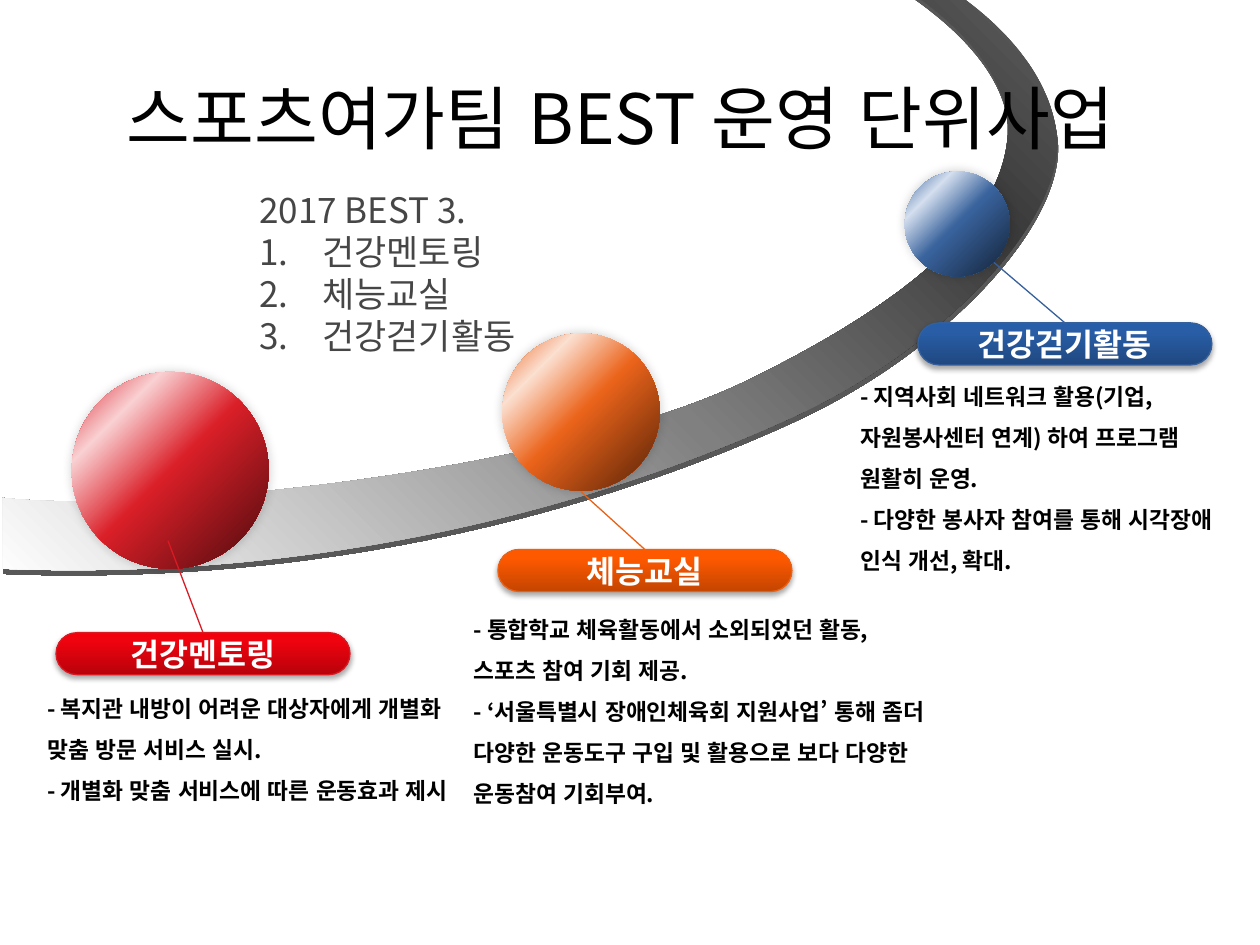
from dataclasses import dataclass

from lxml.etree import SubElement
from pptx import Presentation
from pptx.dml.color import RGBColor
from pptx.enum.lang import MSO_LANGUAGE_ID
from pptx.enum.shapes import MSO_CONNECTOR, MSO_SHAPE
from pptx.enum.text import MSO_ANCHOR, MSO_AUTO_SIZE, PP_ALIGN
from pptx.oxml.ns import qn
from pptx.util import Pt


@dataclass(frozen=True)
class Theme:
    font: str = "Noto Sans CJK KR"
    black: str = "000000"
    white: str = "FFFFFF"
    grey: str = "464646"
    road_edge: str = "585858"
    road: tuple = ((6, "585858"), (20, "3A3A3A"), (50, "808080"), (100, "FFFFFF"))
    title_size: float = 39.6
    list_size: float = 20
    label_size: float = 18
    body_size: float = 13


@dataclass(frozen=True)
class Programme:
    name: str
    details: str
    ball: tuple
    label: tuple
    body: tuple
    line_end: tuple
    line_color: str
    ball_colors: tuple
    label_colors: tuple


THEME = Theme()
LABEL_WIDTH, LABEL_HEIGHT = 168, 24
ROAD_PLACE = (1.5, -29, 606.5, 362)
ROAD = [
    ("moveTo", (478, -29)),
    ("lnTo", (500, -29)),
    ("cubicBezTo", (549, -9), (599, 30), (604, 78)),
    ("cubicBezTo", (608, 125), (540, 199), (451.5, 239)),
    ("cubicBezTo", (364, 279), (204, 333), (1.5, 325)),
    ("lnTo", (1.5, 284.5)),
    ("cubicBezTo", (89, 294), (322, 269), (428, 217)),
    ("cubicBezTo", (534, 165), (574, 119), (576, 75.5)),
    ("cubicBezTo", (577, 32), (526, -6), (478, -29)),
    ("close",),
]
PROGRAMMES = [
    Programme(
        "건강걷기활동",
        "- 지역사회 네트워크 활용(기업, 자원봉사센터 연계) 하여 프로그램 원활히 운영.\v"
        "- 다양한 봉사자 참여를 통해 시각장애 인식 개선, 확대.",
        (517, 98, 60), (524.5, 184.5), (484.5, 207.5, 231, 125), (568, 150),
        "35609C", ("1C314E", "39639D", "D4DFEF"), ("1F4880", "295EA7", "265EAA"),
    ),
    Programme(
        "체능교실",
        "- 통합학교 체육활동에서 소외되었던 활동, 스포츠 참여 기회 제공. \v"
        "- ‘서울특별시 장애인체육회 지원사업’ 통해 좀더 다양한 운동도구 구입 및 "
        "활용으로 보다 다양한 운동참여 기회부여.",
        (287, 190.5, 90), (284.5, 314), (263.5, 340.5, 276.5, 125), (332, 281),
        "EB6015", ("78310B", "EB641B", "FBE0D1"), ("C44500", "FE5900", "FF5A00"),
    ),
    Programme(
        "건강멘토링",
        "- 복지관 내방이 어려운 대상자에게 개별화 맞춤 방문 서비스 실시. \v"
        "- 개별화 맞춤 서비스에 따른 운동효과 제시",
        (41, 212.5, 112.5), (32, 361.5), (20, 385.5, 255, 101.5), (96, 309),
        "DA1A23", ("6D1014", "DA1F28", "F9D1D3"), ("B8020B", "EE030E", "F2000C"),
    ),
]


def points(*values):
    return [Pt(value) for value in values]


def set_gradient(shape, stops, angle=None):
    shape.fill.background()
    properties = shape.element.spPr
    empty_fill = properties.find(qn("a:noFill"))
    gradient = SubElement(properties, qn("a:gradFill"), rotWithShape="1")
    stop_list = SubElement(gradient, qn("a:gsLst"))
    for position, color in stops:
        stop = SubElement(stop_list, qn("a:gs"), pos=str(position * 1000))
        SubElement(stop, qn("a:srgbClr"), val=color)
    if angle is None:
        path = SubElement(gradient, qn("a:path"), {"path": "circle"})
        SubElement(path, qn("a:fillToRect"), l="100000", t="100000")
    else:
        SubElement(gradient, qn("a:lin"), ang=str(angle * 60000), scaled="0")
    properties.replace(empty_fill, gradient)


def set_shadow(shape, color, opacity, blur, distance, angle):
    shape.shadow.inherit = False
    effects = shape.element.spPr.find(qn("a:effectLst"))
    shadow = SubElement(
        effects, qn("a:outerShdw"), blurRad=str(Pt(blur)), dist=str(Pt(distance)),
        dir=str(angle * 60000), algn="ctr", rotWithShape="0",
    )
    color_node = SubElement(shadow, qn("a:srgbClr"), val=color)
    SubElement(color_node, qn("a:alpha"), val=str(opacity * 1000))


def format_text(para, size, color, bold=False):
    for span in para.runs:
        span.font.size = Pt(size)
        span.font.bold = bold
        span.font.name = THEME.font
        span.font.language_id = MSO_LANGUAGE_ID.KOREAN
        span.font.color.rgb = RGBColor.from_string(color)
        span.font._element.set("kern", "0")
        SubElement(span.font._element, qn("a:ea"), typeface=THEME.font)


def add_road(page):
    left, top, width, height = points(*ROAD_PLACE)
    builder = page.shapes.build_freeform(left, top)
    builder.add_line_segments([(left + width, top), (left + width, top + height)])
    road = builder.convert_to_shape()
    outline = next(road.element.iter(qn("a:path")))
    for segment in list(outline):
        outline.remove(segment)
    for command, *corners in ROAD:
        segment = SubElement(outline, qn("a:" + command))
        for x, y in corners:
            SubElement(segment, qn("a:pt"), x=str(Pt(x) - left), y=str(Pt(y) - top))
    road.line.fill.background()
    set_gradient(road, THEME.road, 135)
    set_shadow(road, THEME.road_edge, 100, 0, 3, 80)


def add_ball(page, programme):
    left, top, size = programme.ball
    ball = page.shapes.add_shape(MSO_SHAPE.OVAL, *points(left, top, size, size))
    ball.line.fill.background()
    dark, middle, light = programme.ball_colors
    set_gradient(ball, ((12, dark), (50, middle), (77, light), (100, middle)))
    set_shadow(ball, THEME.black, 20, 6, 0, 315)


def add_label(page, programme):
    label = page.shapes.add_shape(
        MSO_SHAPE.ROUNDED_RECTANGLE, *points(*programme.label, LABEL_WIDTH, LABEL_HEIGHT)
    )
    label.adjustments[0] = 0.5
    label.line.color.rgb = RGBColor.from_string(programme.line_color)
    label.line.width = Pt(0.75)
    set_gradient(label, tuple(zip((0, 80, 100), programme.label_colors)), 270)
    set_shadow(label, THEME.black, 35, 3.1, 1.8, 90)
    frame = label.text_frame
    frame.text = programme.name
    frame.vertical_anchor = MSO_ANCHOR.MIDDLE
    frame.paragraphs[0].alignment = PP_ALIGN.CENTER
    format_text(frame.paragraphs[0], THEME.label_size, THEME.white, True)


def add_text_box(page, place):
    frame = page.shapes.add_textbox(*points(*place)).text_frame
    frame.word_wrap = True
    frame.auto_size = MSO_AUTO_SIZE.SHAPE_TO_FIT_TEXT
    return frame


def add_details(page, programme):
    para = add_text_box(page, programme.body).paragraphs[0]
    para.text = programme.details
    para.line_spacing = 1.5
    format_text(para, THEME.body_size, THEME.black, True)


def add_leader(page, programme):
    left, top = programme.label
    leader = page.shapes.add_connector(
        MSO_CONNECTOR.STRAIGHT, *points(left + LABEL_WIDTH / 2, top, *programme.line_end)
    )
    leader.line.color.rgb = RGBColor.from_string(programme.line_color)
    leader.line.width = Pt(0.75)
    SubElement(leader._element.spPr, qn("a:effectLst"))


def add_numbered_list(page, heading, items):
    frame = add_text_box(page, (141, 104, 353.5, 104.5))
    frame.text = "\n".join([heading, *items])
    for para in frame.paragraphs:
        format_text(para, THEME.list_size, THEME.grey)
    for para in frame.paragraphs[1:]:
        properties = para._p.get_or_add_pPr()
        properties.set("marL", str(Pt(36)))
        properties.set("indent", str(Pt(-36)))
        SubElement(properties, qn("a:buAutoNum"), type="arabicPeriod")


def set_title(page, text):
    title = page.shapes.title
    title.left, title.top, title.width, title.height = points(36, 21.5, 648, 90)
    frame = title.text_frame
    frame.text = text
    frame.auto_size = MSO_AUTO_SIZE.NONE
    frame.vertical_anchor = MSO_ANCHOR.MIDDLE
    frame.paragraphs[0].alignment = PP_ALIGN.CENTER
    format_text(frame.paragraphs[0], THEME.title_size, THEME.black)
    title.element.getparent().append(title.element)


def main():
    deck = Presentation()
    deck.slide_width, deck.slide_height = points(720, 540)
    page = deck.slides.add_slide(deck.slide_layouts[5])
    add_road(page)
    for programme in PROGRAMMES:
        add_ball(page, programme)
    for programme in PROGRAMMES:
        add_label(page, programme)
        add_details(page, programme)
        add_leader(page, programme)
    add_numbered_list(page, "2017 BEST 3.", ["건강멘토링", "체능교실", "건강걷기활동"])
    set_title(page, "스포츠여가팀 BEST 운영 단위사업 ")
    deck.save("out.pptx")


if __name__ == "__main__":
    main()
